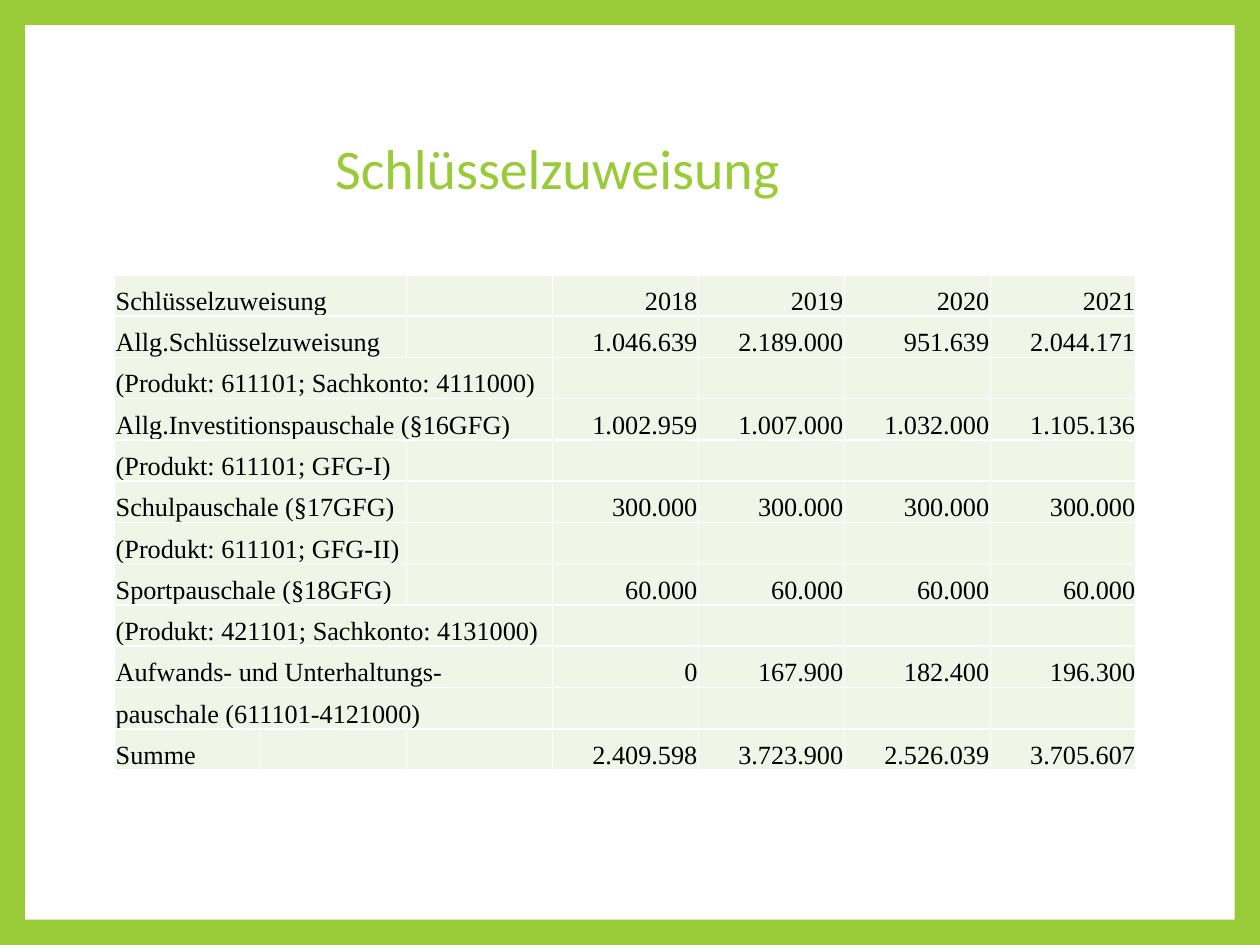
from lxml import etree
from pptx import Presentation
from pptx.dml.color import RGBColor
from pptx.enum.shapes import MSO_SHAPE
from pptx.enum.text import MSO_ANCHOR, PP_ALIGN
from pptx.oxml.ns import qn
from pptx.util import Pt

LEFT, RIGHT = PP_ALIGN.LEFT, PP_ALIGN.RIGHT
MIDDLE, BOTTOM = MSO_ANCHOR.MIDDLE, MSO_ANCHOR.BOTTOM
RECTANGLE = MSO_SHAPE.RECTANGLE
GREEN = RGBColor(0x99, 0xCB, 0x38)
PALE_GREEN = RGBColor(0xEF, 0xF6, 0xE8)
WHITE = RGBColor(0xFF, 0xFF, 0xFF)
BLACK = RGBColor(0, 0, 0)

HEADING = "Schlüsselzuweisung"
GRANTS = [
    ("Schlüsselzuweisung", 2, ["2018", "2019", "2020", "2021"]),
    ("Allg.Schlüsselzuweisung", 2, ["1.046.639", "2.189.000", "951.639", "2.044.171"]),
    ("(Produkt: 611101; Sachkonto: 4111000)", 3, []),
    ("Allg.Investitionspauschale (§16GFG)", 3,
     ["1.002.959", "1.007.000", "1.032.000", "1.105.136"]),
    ("(Produkt: 611101; GFG-I)", 2, []),
    ("Schulpauschale (§17GFG)", 2, ["300.000"] * 4),
    ("(Produkt: 611101; GFG-II)", 2, []),
    ("Sportpauschale (§18GFG)", 2, ["60.000"] * 4),
    ("(Produkt: 421101; Sachkonto: 4131000)", 3, []),
    ("Aufwands- und Unterhaltungs-", 3, ["0", "167.900", "182.400", "196.300"]),
    ("pauschale (611101-4121000)", 3, []),
    ("Summe", 1, ["2.409.598", "3.723.900", "2.526.039", "3.705.607"]),
]
LABEL_COLUMNS, YEAR_COLUMNS = 3, 4
COLUMNS = LABEL_COLUMNS + YEAR_COLUMNS
COLUMN_WIDTH, ROW_HEIGHT = 83.4, 23.6
SLIDE_WIDTH, SLIDE_HEIGHT, FRAME = 720, 540, 14.4


def write(frame, text, font="Times New Roman", size=15, color=BLACK, align=LEFT, spacing=1.0):
    paragraph = frame.paragraphs[0]
    paragraph.alignment = align
    paragraph.line_spacing = spacing
    run = paragraph.add_run()
    run.text = text
    run.font.name = font
    run.font.size = Pt(size)
    run.font.color.rgb = color


def style_cell(cell):
    cell.margin_left = cell.margin_right = cell.margin_top = Pt(0.6)
    cell.margin_bottom = Pt(0)
    cell.vertical_anchor = BOTTOM
    properties = cell._tc.get_or_add_tcPr()
    for side in ("a:lnL", "a:lnR", "a:lnT", "a:lnB"):
        border = etree.SubElement(properties, qn(side), w=str(Pt(1)))
        border_fill = etree.SubElement(border, qn("a:solidFill"))
        etree.SubElement(border_fill, qn("a:srgbClr"), val=str(WHITE))
    cell.fill.solid()
    cell.fill.fore_color.rgb = PALE_GREEN


presentation = Presentation()
presentation.slide_width, presentation.slide_height = Pt(SLIDE_WIDTH), Pt(SLIDE_HEIGHT)
slide = presentation.slides.add_slide(presentation.slide_layouts[5])
slide.background.fill.solid()
slide.background.fill.fore_color.rgb = GREEN

panel = slide.shapes.add_shape(RECTANGLE, Pt(FRAME), Pt(FRAME),
                               Pt(SLIDE_WIDTH - 2 * FRAME), Pt(SLIDE_HEIGHT - 2 * FRAME))
panel.shadow.inherit = False
panel.fill.solid()
panel.fill.fore_color.rgb = WHITE
panel.line.fill.background()

title = slide.shapes.title
title.element.addprevious(panel.element)
title.left, title.top, title.width, title.height = Pt(184.3), Pt(60.5), Pt(306), Pt(75)
title.text_frame.vertical_anchor = MIDDLE
write(title.text_frame, HEADING, font="Calibri", size=32, color=GREEN, spacing=0.9)

grants = slide.shapes.add_table(len(GRANTS), COLUMNS, Pt(65.5), Pt(157),
                                Pt(COLUMN_WIDTH * COLUMNS), Pt(ROW_HEIGHT * len(GRANTS))).table
grants.first_row = grants.horz_banding = False
for column in grants.columns:
    column.width = Pt(COLUMN_WIDTH)
for row_index, (label, span, amounts) in enumerate(GRANTS):
    grants.rows[row_index].height = Pt(ROW_HEIGHT)
    for column_index in range(COLUMNS):
        style_cell(grants.cell(row_index, column_index))
    label_cell = grants.cell(row_index, 0)
    if span > 1:
        label_cell.merge(grants.cell(row_index, span - 1))
    write(label_cell.text_frame, label)
    for column_index, amount in enumerate(amounts, LABEL_COLUMNS):
        write(grants.cell(row_index, column_index).text_frame, amount, align=RIGHT)

presentation.save("out.pptx")
